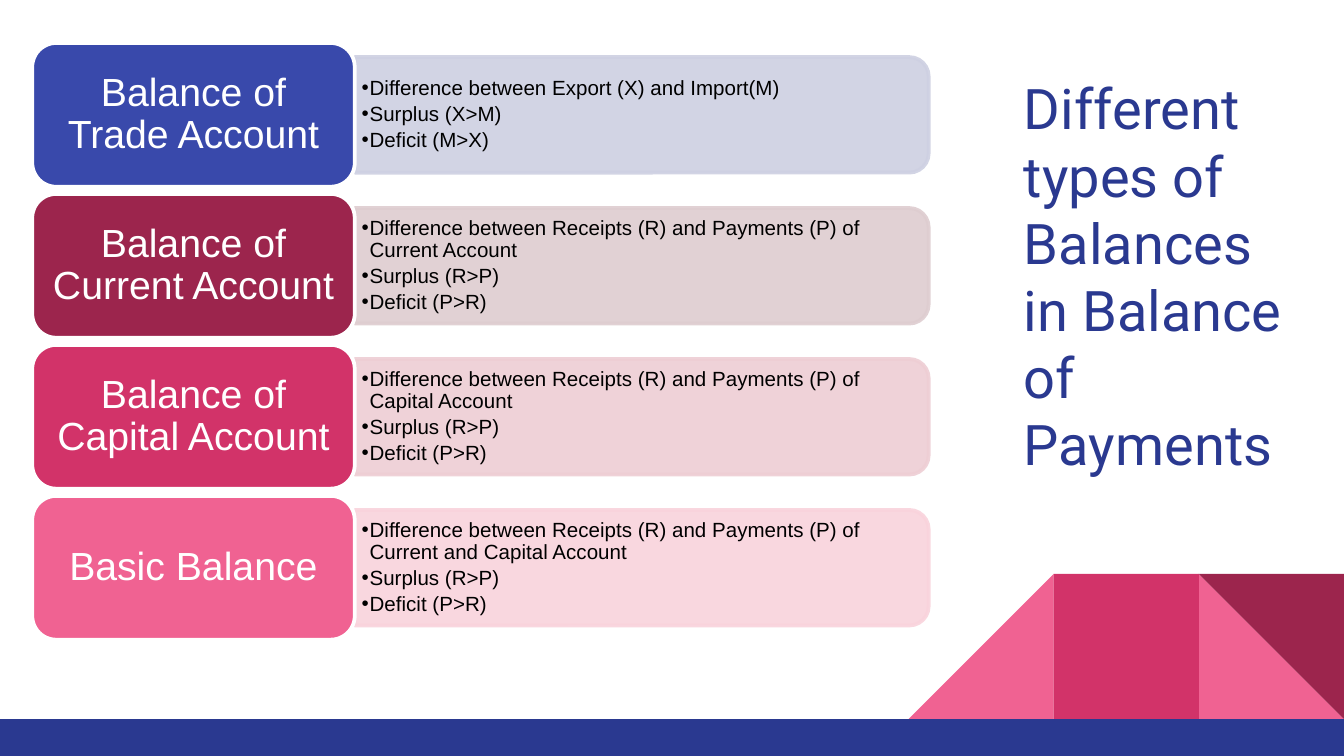
from lxml.etree import SubElement
from pptx import Presentation
from pptx.dml.color import RGBColor
from pptx.enum.shapes import MSO_SHAPE as Preset
from pptx.enum.text import MSO_ANCHOR as Anchor, PP_ALIGN as Align
from pptx.oxml.ns import qn
from pptx.util import Inches, Pt

TITLE = "Different types of Balances in Balance of Payments"
BALANCES = [
    ("Balance of Trade Account", "3949AB", "CED0E2",
     ["Difference between Export (X) and Import(M)", "Surplus (X>M)", "Deficit (M>X)"]),
    ("Balance of Current Account", "9C254D", "DECDD0",
     ["Difference between Receipts (R) and Payments (P) of Current Account",
      "Surplus (R>P)", "Deficit (P>R)"]),
    ("Balance of Capital Account", "D23369", "EECED4",
     ["Difference between Receipts (R) and Payments (P) of Capital Account",
      "Surplus (R>P)", "Deficit (P>R)"]),
    ("Basic Balance", "F06292", "F9D3DC",
     ["Difference between Receipts (R) and Payments (P) of Current and Capital Account",
      "Surplus (R>P)", "Deficit (P>R)"]),
]
CORNER = [
    (2, Preset.RIGHT_TRIANGLE, "F06292", 0),
    (0, Preset.RIGHT_TRIANGLE, "F06292", 270),
    (1, Preset.RECTANGLE, "D23369", 0),
    (2, Preset.RIGHT_TRIANGLE, "9C254D", 180),
]

WIDTH = 10
HEIGHT = WIDTH * 9 / 16
CORNER_SIDE, BAND_TOP = 1.08, 5.35
TILE_LEFT, TILE_TOP, TILE_WIDTH, TILE_HEIGHT = 0.24, 0.32, 2.4, 1.07
LAST_TILE_TOP = 3.69
ROW_PITCH = (LAST_TILE_TOP - TILE_TOP) / (len(BALANCES) - 1)
PANEL_LENGTH, PANEL_HEIGHT = 4.27, 0.86
LIST_WIDTH, LIST_HEIGHT = 4.22, 0.77


def color(value):
    return RGBColor.from_string(value)


def add_shape(slide, preset, box, fill, line=None, rotation=0, opacity=None):
    shape = slide.shapes.add_shape(preset, *map(Inches, box))
    shape.shadow.inherit = False
    shape.rotation = rotation
    shape.fill.solid()
    shape.fill.fore_color.rgb = color(fill)
    if line:
        shape.line.color.rgb = color(line)
        shape.line.width = Pt(2)
    else:
        shape.line.fill.background()
    if opacity:
        for tint in shape.element.spPr.iter(qn("a:srgbClr")):
            SubElement(tint, qn("a:alpha"), val=str(opacity * 1000))
    return shape


def write(shape, lines, size, font, ink, margins, anchor=Anchor.MIDDLE,
          align=Align.LEFT, spacing=None):
    frame = shape.text_frame
    frame.word_wrap = True
    frame.vertical_anchor = anchor
    frame.margin_left = frame.margin_right = Inches(margins[0])
    frame.margin_top = frame.margin_bottom = Inches(margins[1])
    frame.text = "\n".join(lines)
    for paragraph in frame.paragraphs:
        paragraph.alignment = align
        paragraph.line_spacing = spacing
        for run in paragraph.runs:
            run.font.size = Pt(size)
            run.font.name = font
            run.font.color.rgb = color(ink)
    return frame


def add_bullets(frame):
    indent = Inches(0.06)
    for paragraph in frame.paragraphs:
        paragraph.level = 1
        paragraph.space_after = Pt(1.9)
        properties = paragraph._p.get_or_add_pPr()
        properties.set("marL", str(int(indent)))
        properties.set("indent", str(-int(indent)))
        bullet_color = SubElement(properties, qn("a:buClr"))
        SubElement(bullet_color, qn("a:srgbClr"), val="000000")
        SubElement(properties, qn("a:buFont"), typeface="Arial")
        SubElement(properties, qn("a:buChar"), char="•")


def add_balance(slide, row, name, tile_fill, panel_fill, points):
    top = TILE_TOP + row * ROW_PITCH
    middle = top + TILE_HEIGHT / 2
    panel_left = TILE_LEFT + TILE_WIDTH
    panel_box = (panel_left + (PANEL_LENGTH - PANEL_HEIGHT) / 2,
                 middle - PANEL_LENGTH / 2, PANEL_HEIGHT, PANEL_LENGTH)
    add_shape(slide, Preset.ROUND_2_SAME_RECTANGLE, panel_box, panel_fill,
              panel_fill, rotation=90, opacity=90)

    list_box = (panel_left, middle - LIST_HEIGHT / 2, LIST_WIDTH, LIST_HEIGHT)
    details = slide.shapes.add_textbox(*map(Inches, list_box))
    add_bullets(write(details, points, 11, "Arial", "000000", (0.05, 0.02), spacing=0.9))

    tile = add_shape(slide, Preset.ROUNDED_RECTANGLE,
                     (TILE_LEFT, top, TILE_WIDTH, TILE_HEIGHT), tile_fill, "FFFFFF")
    write(tile, [name], 21, "Arial", "FFFFFF", (0.09, 0.04),
          align=Align.CENTER, spacing=0.9)


def main():
    """Build the slide on the types of balances in the balance of payments."""
    presentation = Presentation()
    presentation.slide_width, presentation.slide_height = Inches(WIDTH), Inches(HEIGHT)
    slide = presentation.slides.add_slide(presentation.slide_layouts[6])

    for column, preset, fill, rotation in CORNER:
        left = WIDTH - (3 - column) * CORNER_SIDE
        add_shape(slide, preset, (left, BAND_TOP - CORNER_SIDE, CORNER_SIDE, CORNER_SIDE),
                  fill, rotation=rotation)
    add_shape(slide, Preset.RECTANGLE, (0, BAND_TOP, WIDTH, HEIGHT - BAND_TOP), "2A3990")

    for row, balance in enumerate(BALANCES):
        add_balance(slide, row, *balance)

    title = slide.shapes.add_textbox(*map(Inches, (7.52, 0.45, 2.14, 3.39)))
    write(title, [TITLE], 30, "Roboto", "2A3990", (0.1, 0.1), anchor=Anchor.TOP)
    presentation.save("out.pptx")


if __name__ == "__main__":
    main()
